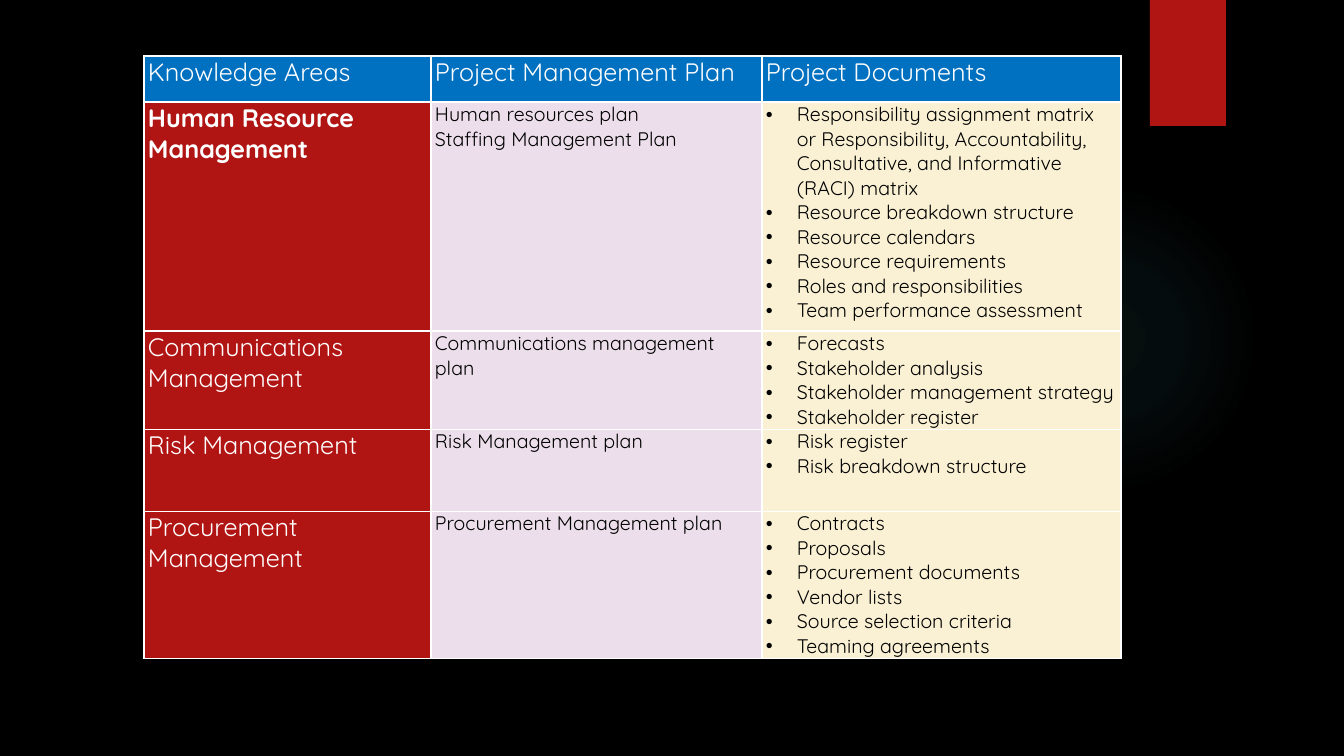
"""Build a slide with a table of project management plans and documents."""
from pptx import Presentation, util as u
from pptx.dml.color import RGBColor
from pptx.enum import shapes
from pptx.oxml import parse_xml
from pptx.oxml.ns import nsdecls


def px(n):
    return u.Emu(round(n * 914400 / 100.8))


def paint(fill, hue):
    fill.solid()
    fill.fore_color.rgb = RGBColor.from_string(hue)


WHITE, BLACK, RED, BLUE = "FFFFFF", "000000", "B01513", "0070C0"
LILAC, CREAM = "ECDFEB", "FAF1D4"
NS = nsdecls("a")

rows = [
    (46, ["Knowledge Areas"], ["Project Management Plan"], ["Project Documents"]),
    (229, ["Human Resource Management"],
     ["Human resources plan", "Staffing Management Plan"],
     ["Responsibility assignment matrix or Responsibility, Accountability, "
      "Consultative, and Informative (RACI) matrix",
      "Resource breakdown structure", "Resource calendars",
      "Resource requirements", "Roles and responsibilities",
      "Team performance assessment"]),
    (98, ["Communications Management"], ["Communications management plan"],
     ["Forecasts", "Stakeholder analysis", "Stakeholder management strategy",
      "Stakeholder register"]),
    (82, ["Risk Management"], ["Risk Management plan"],
     ["Risk register", "Risk breakdown structure"]),
    (147, ["Procurement Management"], ["Procurement Management plan"],
     ["Contracts", "Proposals", "Procurement documents", "Vendor lists",
      "Source selection criteria", "Teaming agreements"]),
]
widths = [287, 331, 359]

prs = Presentation()
prs.slide_width, prs.slide_height = px(1344), px(756)
slide = prs.slides.add_slide(prs.slide_layouts[6])
paint(slide.background.fill, BLACK)

glow = slide.shapes.add_shape(shapes.MSO_SHAPE.OVAL, px(949), px(184), px(310), px(310))
stops = "".join(
    f'<a:gs pos="{pos}000"><a:srgbClr val="50B9C1"><a:alpha val="{alpha}000"/></a:srgbClr></a:gs>'
    for pos, alpha in [(0, 7), (36, 6), (69, 0)])
glow.element.spPr.prstGeom.addnext(parse_xml(
    f'<a:gradFill {NS}><a:gsLst>{stops}</a:gsLst><a:path path="circle">'
    '<a:fillToRect l="50000" t="50000" r="50000" b="50000"/></a:path></a:gradFill>'))

flag = slide.shapes.add_shape(shapes.MSO_SHAPE.RECTANGLE, px(1150), 0, px(76), px(126))
paint(flag.fill, RED)
for shape in (glow, flag):
    shape.line.fill.background()
    shape.shadow.inherit = False

table = slide.shapes.add_table(
    len(rows), len(widths), px(144), px(56), px(sum(widths)),
    px(sum(row[0] for row in rows))).table
table.first_row = table.horz_banding = False
for col, width in zip(table.columns, widths):
    col.width = px(width)

for r, (height, *cells) in enumerate(rows):
    table.rows[r].height = px(height)
    for c, lines in enumerate(cells):
        cell = table.cell(r, c)
        cell.margin_left = cell.margin_right = px(4)
        cell.margin_top = cell.margin_bottom = 0
        props = cell._tc.get_or_add_tcPr()
        for side in "LRTB":
            props.append(parse_xml(
                f'<a:ln{side} {NS} w="12700"><a:solidFill><a:srgbClr val="{WHITE}"/>'
                f'</a:solidFill></a:ln{side}>'))
        paint(cell.fill, (RED, LILAC, CREAM)[c] if r else BLUE)
        cell.text = "\n".join(lines)
        label = r == 0 or c == 0
        for para in cell.text_frame.paragraphs:
            if r and c == 2:
                form = para._p.get_or_add_pPr()
                form.set("marL", str(px(31)))
                form.set("indent", str(-px(31)))
                form.append(parse_xml(f'<a:buFont {NS} typeface="Arial"/>'))
                form.append(parse_xml(f'<a:buChar {NS} char="•"/>'))
            font = para.font
            font.name = "Quicksand"
            font.size = u.Pt(18 if label else 14)
            font.bold = (r, c) == (1, 0)
            paint(font.fill, WHITE if label else BLACK)

prs.save("out.pptx")
